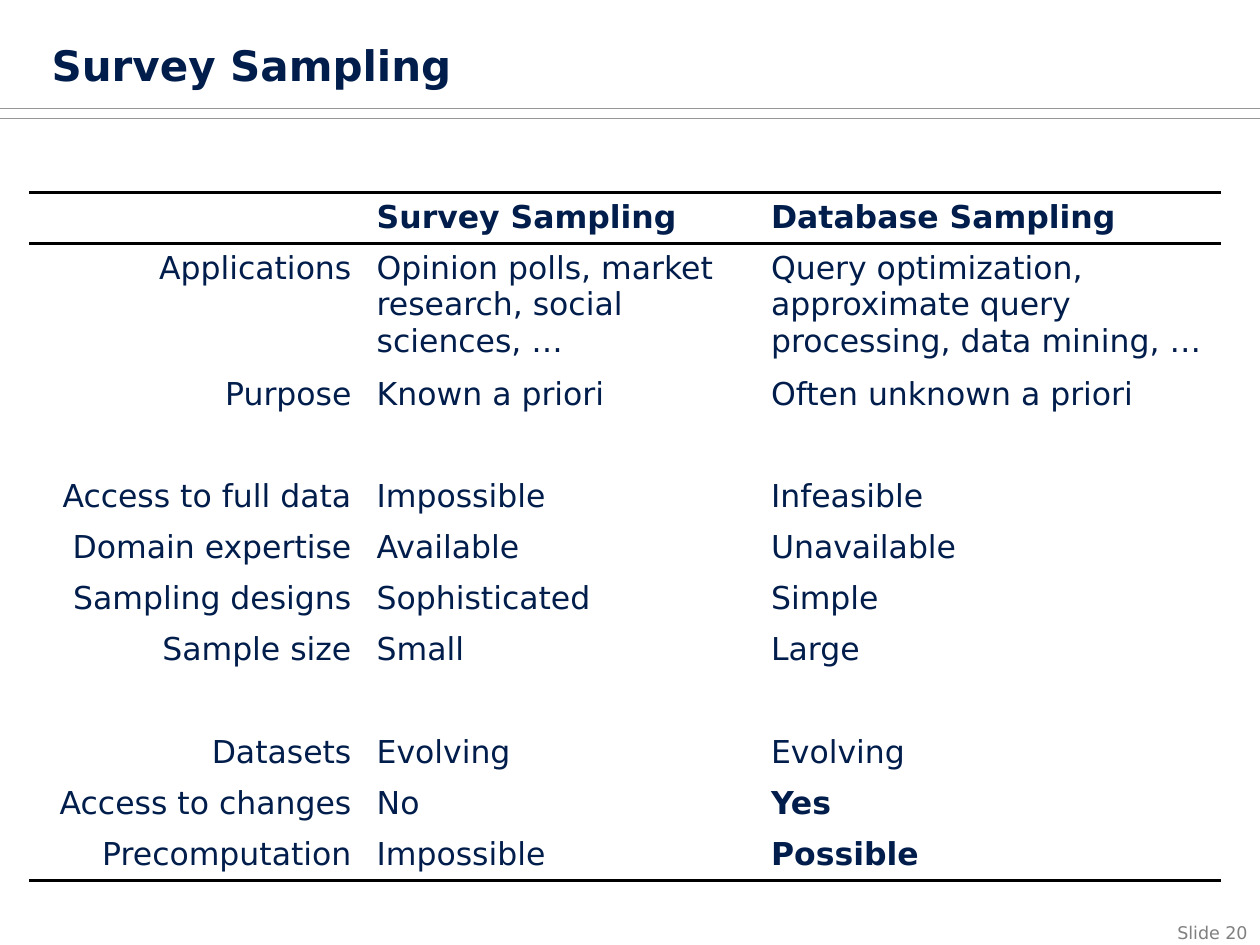
from lxml.etree import SubElement
from pptx import Presentation
from pptx.dml.color import RGBColor
from pptx.enum.shapes import MSO_CONNECTOR as Connector
from pptx.enum.text import MSO_ANCHOR as Anchor, MSO_AUTO_SIZE as AutoSize, PP_ALIGN as Align
from pptx.oxml.ns import qn
from pptx.util import Inches, Pt

WIDTH, HEIGHT = 10, 7.5
FONT = "DejaVu Sans"
NAVY, GREY, RULE_GREY, BLACK, WHITE = "001D4B", "808080", "969696", "000000", "FFFFFF"
NO_STYLE = "{2D5ABB26-0587-4C30-8999-92F81FD0307C}"
COLUMN_WIDTHS = (2.66, 3.13, 3.67)
COMPARISON = [
    ("", "Survey Sampling", "Database Sampling"),
    ("Applications", "Opinion polls, market research, social sciences, …",
     "Query optimization, approximate query processing, data mining, …"),
    ("Purpose", "Known a priori", "Often unknown a priori"),
    ("", "", ""),
    ("Access to full data", "Impossible", "Infeasible"),
    ("Domain expertise", "Available", "Unavailable"),
    ("Sampling designs", "Sophisticated", "Simple"),
    ("Sample size", "Small", "Large"),
    ("", "", ""),
    ("Datasets", "Evolving", "Evolving"),
    ("Access to changes", "No", "Yes"),
    ("Precomputation", "Impossible", "Possible"),
]
EMPHASIZED = {"Yes", "Possible"}


def color(hex_code):
    """Return the colour for a hex string."""
    return RGBColor.from_string(hex_code)


def write(frame, text, size=18, fill=NAVY, bold=False, align=Align.LEFT):
    """Put one formatted paragraph into a text frame."""
    paragraph = frame.paragraphs[0]
    paragraph.alignment = align
    if text:
        run = paragraph.add_run()
        run.text = text
        run.font.name, run.font.size, run.font.bold = FONT, Pt(size), bold
        run.font.color.rgb = color(fill)


def add_title(slide, text):
    """Place and fill the title placeholder."""
    title = slide.shapes.title
    title.left, title.top = Inches(0.31), Inches(0.23)
    title.width, title.height = Inches(7.19), Inches(0.42)
    frame = title.text_frame
    frame.auto_size = AutoSize.NONE
    frame.vertical_anchor = Anchor.TOP
    frame.margin_top = Inches(0.08)
    write(frame, text, size=24, bold=True)


def add_header_rule(slide, y):
    """Draw a thin rule across the whole slide."""
    rule = slide.shapes.add_connector(
        Connector.STRAIGHT, 0, Inches(y), Inches(WIDTH), Inches(y))
    rule.line.color.rgb = color(RULE_GREY)
    rule.line.width = Pt(0.5)
    SubElement(rule._element.spPr, qn("a:effectLst"))


def add_border(cell, side):
    """Draw a black border on one side of a cell."""
    border = SubElement(cell._tc.get_or_add_tcPr(), qn(f"a:ln{side}"), w=str(Pt(2)))
    SubElement(SubElement(border, qn("a:solidFill")), qn("a:srgbClr"), val=BLACK)


def add_comparison(slide):
    """Build the comparison table with rules around its header and below its end."""
    last = len(COMPARISON) - 1
    table = slide.shapes.add_table(
        len(COMPARISON), len(COLUMN_WIDTHS), Inches(0.23), Inches(1.53),
        Inches(sum(COLUMN_WIDTHS)), Inches(4.87)).table
    table.first_row = table.horz_banding = False
    table._tbl.tblPr.find(qn("a:tableStyleId")).text = NO_STYLE
    for column, width in zip(table.columns, COLUMN_WIDTHS):
        column.width = Inches(width)
    for row, entries in enumerate(COMPARISON):
        sides = {0: "TB", last: "B"}.get(row, "")
        for col, text in enumerate(entries):
            cell = table.cell(row, col)
            for side in sides:
                add_border(cell, side)
            cell.fill.solid()
            cell.fill.fore_color.rgb = color(WHITE)
            write(cell.text_frame, text, bold=row == 0 or text in EMPHASIZED,
                  align=Align.LEFT if col else Align.RIGHT)


def add_slide_number(slide, text):
    """Write the slide number in the bottom right corner."""
    width, height = 1.17, 0.27
    box = slide.shapes.add_textbox(
        Inches(WIDTH - width), Inches(7.27), Inches(width), Inches(height))
    box.text_frame.word_wrap = True
    write(box.text_frame, text, size=10, fill=GREY, align=Align.RIGHT)


def main():
    """Build and save the slide."""
    deck = Presentation()
    deck.slide_width, deck.slide_height = Inches(WIDTH), Inches(HEIGHT)
    slide = deck.slides.add_slide(deck.slide_layouts[5])
    add_slide_number(slide, "Slide 20")
    for y in (0.94, 0.86):
        add_header_rule(slide, y)
    add_title(slide, "Survey Sampling")
    add_comparison(slide)
    deck.save("out.pptx")


if __name__ == "__main__":
    main()
